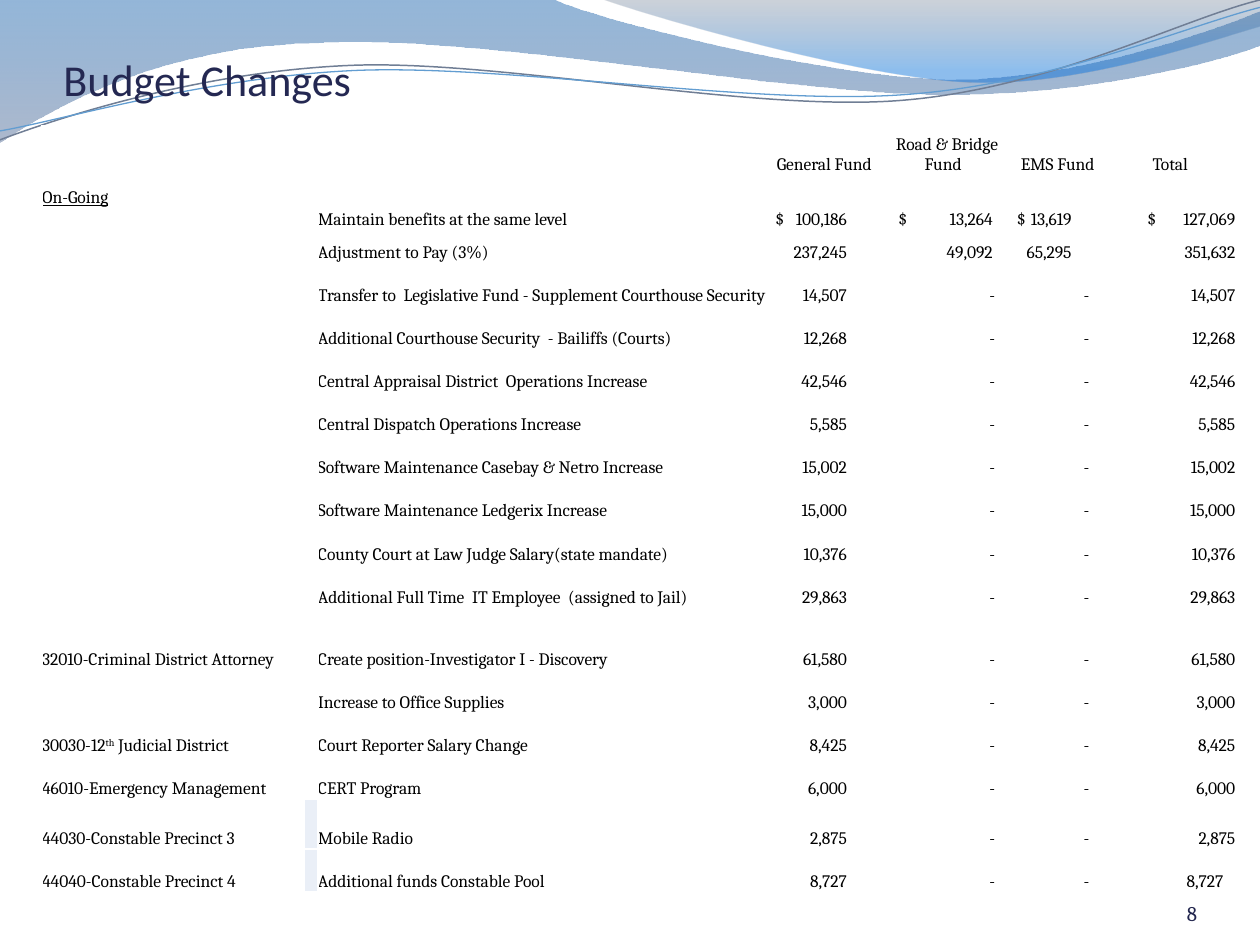
"""Build the budget changes slide with its wave header and table of on-going items."""
from lxml.etree import Element, SubElement
from pptx import Presentation
from pptx.dml.color import RGBColor
from pptx.enum.text import MSO_ANCHOR as Anchor, PP_ALIGN as Align
from pptx.oxml.ns import qn
from pptx.util import Cm, Pt

COLORS = {"title": "242852", "number": "22264E", "text": "000000", "marker": "EAEFF7",
          "deep": "125EAA", "slate": "697FA4", "gray": "596982", "bright": "0670DA",
          "gray_line": "707E95", "blue_line": "629DD1"}


def style_runs(paragraph, font_name, size, color):
    for run in paragraph.runs:
        run.font.name = font_name
        run.font.size = Pt(size)
        run.font.color.rgb = RGBColor.from_string(COLORS[color])


def add_wave(start, segments, closed):
    points = [(Cm(x), Cm(y)) for segment in segments for x, y in segment]
    builder = slide.shapes.build_freeform(Cm(start[0]), Cm(start[1]), scale=1.0)
    builder.add_line_segments(points, close=closed)
    shape = builder.convert_to_shape()
    shape.shadow.inherit = False
    lines = list(shape._element.iter(qn("a:lnTo")))
    for segment in segments:
        group, lines = lines[:len(segment)], lines[len(segment):]
        if len(segment) == 3:
            curve = Element(qn("a:cubicBezTo"))
            group[0].addprevious(curve)
            for line in group:
                curve.append(line[0])
                line.getparent().remove(line)
    return shape


presentation = Presentation()
presentation.slide_width, presentation.slide_height = Cm(25.4), Cm(19.05)
slide = presentation.slides.add_slide(presentation.slide_layouts[6])

bands = [
    ((0, 0), [((11.18, 0),),
              ((12.09, 0.43), (16.87, 1.6), (19.25, 1.6)),
              ((21.67, 1.6), (24.33, 0.66), (25.4, 0.23)),
              ((25.4, 0.91),),
              ((24.97, 1.12), (22.1, 1.93), (18.95, 1.9)),
              ((15.8, 1.9), (9.7, 0.71), (6.53, 0.86)),
              ((3.28, 0.91), (1.17, 2.11), (0, 2.87))],
     [(0, "deep", 45), (1, "slate", 55)]),
    ((12.17, 0), [((12.93, 0.28), (17.32, 1.57), (19.53, 1.65)),
                  ((21.74, 1.75), (24.41, 0.81), (25.4, 0.53)),
                  ((25.4, 0),)],
     [(0, "gray", 30), (0.8, "bright", 45)]),
]
for start, segments, stops in bands:
    band = add_wave(start, segments, True)
    band.line.fill.background()
    band.fill.gradient()
    band.fill.gradient_angle = 270
    for stop, (position, color, opacity) in zip(band.fill.gradient_stops, stops):
        stop.position = position
        stop.color.rgb = RGBColor.from_string(COLORS[color])
    for element, (_, _, opacity) in zip(band._element.spPr.iter(qn("a:srgbClr")), stops):
        SubElement(element, qn("a:alpha"), val=str(opacity * 1000))

curves = [
    ((0, 2.82), [((1.22, 2.36), (4.01, 1.45), (7.04, 1.32)),
                 ((10.03, 1.19), (15.06, 2.26), (18.11, 2.03)),
                 ((21.16, 1.8), (23.83, 0.38), (25.4, 0))], "gray_line", 0.85),
    ((0, 2.64), [((1.19, 2.44), (4.17, 1.55), (7.19, 1.42)),
                 ((10.24, 1.3), (15.16, 2.13), (18.21, 1.91)),
                 ((21.23, 1.7), (23.9, 0.53), (25.4, 0.15))], "blue_line", 0.75),
]
for start, segments, color, width in curves:
    curve = add_wave(start, segments, False)
    curve.fill.background()
    curve.line.color.rgb = RGBColor.from_string(COLORS[color])
    curve.line.width = Pt(width)

labels = [
    ("Budget Changes", (1.28, 1.05, 22.86, 1.07), Align.LEFT, "Calibri", 25.2, "title"),
    ("8", (22.02, 17.65, 2.11, 1.02), Align.RIGHT, "Cambria", 12, "number"),
]
for text, box, alignment, font_name, size, color in labels:
    text_frame = slide.shapes.add_textbox(*map(Cm, box)).text_frame
    text_frame.word_wrap = True
    text_frame.vertical_anchor = Anchor.BOTTOM
    text_frame.margin_left = text_frame.margin_right = 0
    text_frame.margin_top = text_frame.margin_bottom = 0
    text_frame.text = text
    text_frame.paragraphs[0].alignment = alignment
    style_runs(text_frame.paragraphs[0], font_name, size, color)

items = [
    ("", "Maintain benefits at the same level", "$\t100,186", "$\t13,264", "$\t13,619", "$\t127,069"),
    ("", "Adjustment to Pay (3%)", "237,245", "49,092", "65,295", "351,632"),
]
general_fund_items = [
    ("", "Transfer to  Legislative Fund - Supplement Courthouse Security", "14,507"),
    ("", "Additional Courthouse Security  - Bailiffs (Courts)", "12,268"),
    ("", "Central Appraisal District  Operations Increase", "42,546"),
    ("", "Central Dispatch Operations Increase", "5,585"),
    ("", "Software Maintenance Casebay & Netro Increase", "15,002"),
    ("", "Software Maintenance Ledgerix Increase", "15,000"),
    ("", "County Court at Law Judge Salary(state mandate)", "10,376"),
    ("", "Additional Full Time  IT Employee  (assigned to Jail)", "29,863"),
    ("32010-Criminal District Attorney", "Create position-Investigator I - Discovery", "61,580"),
    ("", "Increase to Office Supplies", "3,000"),
    ("30030-12^th^ Judicial District", "Court Reporter Salary Change", "8,425"),
    ("46010-Emergency Management", "CERT Program", "6,000"),
    ("44030-Constable Precinct 3", "Mobile Radio", "2,875"),
    ("44040-Constable Precinct 4", "Additional funds Constable Pool", "8,727"),
]
items += [(office, item, amount, "-", "-", amount) for office, item, amount in general_fund_items]
rows = [("", "", "General Fund", " Road & Bridge Fund ", "EMS Fund", "Total"),
        ("On-Going", "", "", "", "", "")] + items

column_widths = [5.28, 0.28, 0.58, 8.56, 2.13, 2.74, 1.8, 2.74]
row_heights = [0.99, 0.66, 0.44, 0.66] + [0.87] * 8 + [1.25] + [0.87] * 3 + [1, 0.87]
text_columns = (0, 2, 4, 5, 6, 7)
left_margins = {4: 0.08, 5: 0.43, 6: 0.08, 7: 0.91}
right_margins = {4: 0.61, 5: 0.41, 6: 0.62, 7: 0.06}
dash_margins = {5: 0.36, 6: 0.26}
table = slide.shapes.add_table(len(rows), len(column_widths), Cm(0.85), Cm(2.54),
                               Cm(sum(column_widths)), Cm(sum(row_heights))).table
table.first_row = table.horz_banding = False
for column, width in zip(table.columns, column_widths):
    column.width = Cm(width)
for row, height in zip(table.rows, row_heights):
    row.height = Cm(height)
for cell in table.iter_cells():
    cell.fill.background()
    cell.vertical_anchor = Anchor.BOTTOM
    cell.margin_left = cell.margin_right = cell.margin_top = cell.margin_bottom = 0

for row_index, values in enumerate(rows):
    if row_index >= 2:
        table.cell(row_index, 2).merge(table.cell(row_index, 3))
    if 12 <= row_index <= 15:
        table.cell(row_index, 0).merge(table.cell(row_index, 1))
    if row_index >= 16:
        marker = table.cell(row_index, 1)
        marker.fill.solid()
        marker.fill.fore_color.rgb = RGBColor.from_string(COLORS["marker"])
    for column_index, text in zip(text_columns, values):
        if not text:
            continue
        cell = table.cell(row_index, column_index)
        paragraph = cell.text_frame.paragraphs[0]
        parts = text.split("^")
        paragraph.text = parts[0]
        for part in parts[1:]:
            paragraph.add_run().text = part
        if len(parts) > 1:
            paragraph.runs[1].font._element.set("baseline", "30000")
        style_runs(paragraph, "Cambria", 10, "text")
        if row_index == 0:
            paragraph.alignment = Align.CENTER
        elif "\t" in text:
            left, right = left_margins[column_index], right_margins[column_index]
            cell.margin_left = Cm(left)
            paragraph.alignment = Align.LEFT
            tabs = SubElement(paragraph._p.get_or_add_pPr(), qn("a:tabLst"))
            stop = Cm(column_widths[column_index] - left - right)
            SubElement(tabs, qn("a:tab"), pos=str(stop), algn="r")
        elif column_index >= 4:
            paragraph.alignment = Align.RIGHT
            margins = dash_margins if text == "-" else right_margins
            cell.margin_right = Cm(margins[column_index])
table.cell(1, 0).text_frame.paragraphs[0].runs[0].font.underline = True
table.cell(len(rows) - 1, 7).margin_right = Cm(0.3)

for cell in table.iter_cells():
    SubElement(cell.text_frame.paragraphs[0]._p, qn("a:endParaRPr"), sz="1000")

presentation.save("out.pptx")
